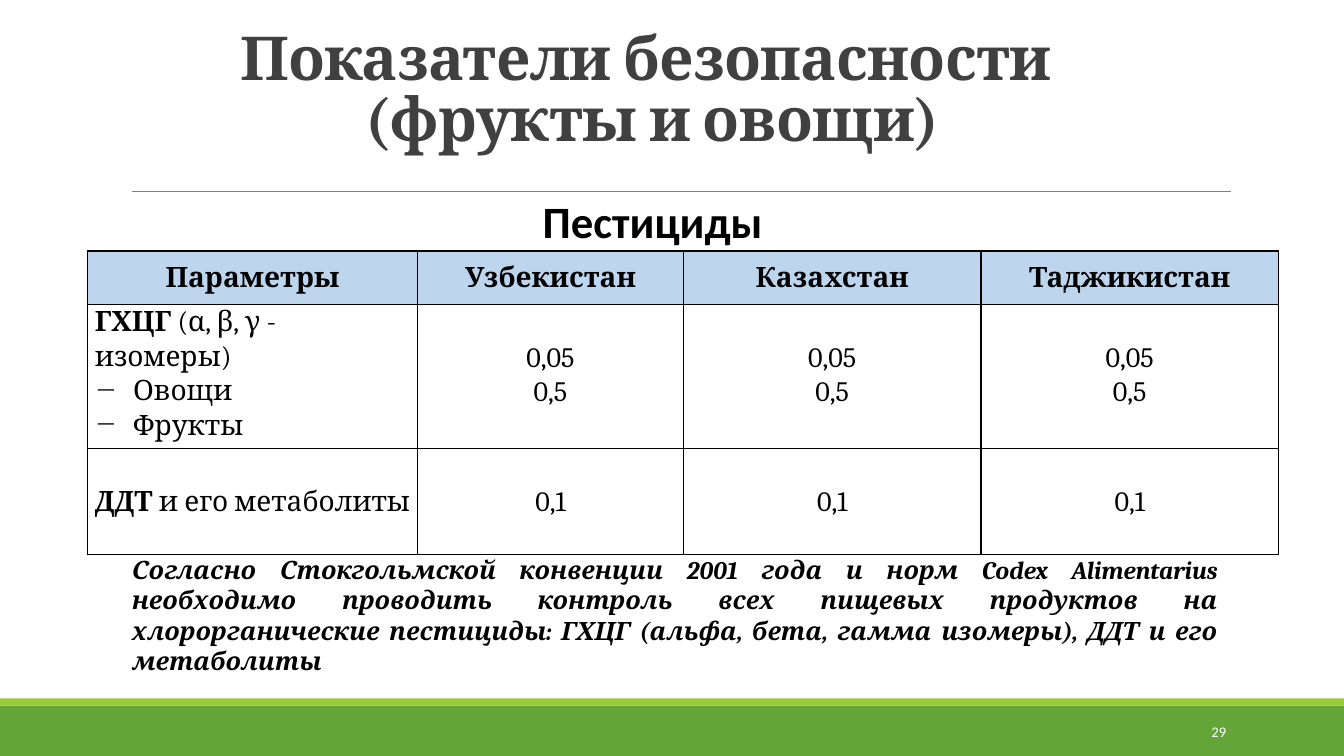
"""Build the slide on pesticide safety limits for fruit and vegetables."""
from dataclasses import dataclass
from typing import Optional

import lxml.etree
import pptx
import pptx.dml.color
import pptx.enum.shapes
import pptx.enum.text
import pptx.oxml
import pptx.oxml.ns
import pptx.util

Inches = pptx.util.Inches
Pt = pptx.util.Pt
RGBColor = pptx.dml.color.RGBColor
ALIGN = pptx.enum.text.PP_ALIGN
ANCHOR = pptx.enum.text.MSO_ANCHOR
qn = pptx.oxml.ns.qn

BLACK = RGBColor(0x00, 0x00, 0x00)
WHITE = RGBColor(0xFF, 0xFF, 0xFF)
DARK_GREY = RGBColor(0x40, 0x40, 0x40)
GREY = RGBColor(0x80, 0x80, 0x80)
GREEN = RGBColor(0x63, 0xA5, 0x37)
LIGHT_GREEN = RGBColor(0x99, 0xCB, 0x38)
HEADER_BLUE = RGBColor(0xBD, 0xD6, 0xEE)


@dataclass(frozen=True)
class Style:
    size: float
    font: str = "Cambria"
    color: RGBColor = BLACK
    bold: bool = False
    italic: bool = False
    align: ALIGN = ALIGN.CENTER
    line_spacing: float = 1.0
    tracking: int = 0


@dataclass(frozen=True)
class Label:
    text: str
    left: float
    top: float
    width: float
    height: float
    style: Style
    anchor: ANCHOR = ANCHOR.TOP
    wrap: bool = True


@dataclass(frozen=True)
class Band:
    top: float
    height: float
    color: RGBColor


@dataclass(frozen=True)
class Line:
    text: str
    bold_start: str = ""
    bullet: Optional[str] = None


@dataclass(frozen=True)
class Cell:
    lines: tuple[Line, ...]
    style: Style
    top_margin: float = 0
    header: bool = False


HEADER = Style(20, bold=True, line_spacing=1.07)
VALUE = Style(20, line_spacing=1.07)
PARAMETER = Style(20, align=ALIGN.LEFT, line_spacing=1.07)
LINE_HEIGHT = 0.35
COLUMN_WIDTHS = (3.27, 2.64, 2.95, 2.95)
ROW_HEIGHTS = (0.53, 1.43, 1.05)
COUNTRIES = ("Узбекистан", "Казахстан", "Таджикистан")

BANDS = (Band(7, 0.5, GREEN), Band(6.93, 0.07, LIGHT_GREEN))
LABELS = (
    Label("Показатели безопасности \v(фрукты и овощи)", 0.97, 0.76, 11, 0.82,
          Style(43.2, color=DARK_GREY, bold=True, line_spacing=0.85, tracking=-50),
          ANCHOR.BOTTOM),
    Label("Пестициды", 5.27, 1.84, 2.41, 0.65,
          Style(32, "Calibri", bold=True, line_spacing=1.07), wrap=False),
    Label("Согласно Стокгольмской конвенции 2001 года и норм Codex Alimentarius "
          "необходимо проводить контроль всех пищевых продуктов на "
          "хлорорганические пестициды: ГХЦГ (альфа, бета, гамма изомеры), "
          "ДДТ и его метаболиты", 1.21, 5.45, 10.97, 1.01,
          Style(18, bold=True, italic=True, align=ALIGN.JUSTIFY)),
    Label("29", 10.83, 7.06, 1.43, 0.4,
          Style(10.5, "Calibri", WHITE, align=ALIGN.RIGHT), ANCHOR.MIDDLE),
)
ROWS = (
    tuple(Cell((Line(name),), HEADER, header=True) for name in ("Параметры", *COUNTRIES)),
    (Cell((Line(" (α, β, γ - изомеры)", "ГХЦГ"),
           Line("Овощи", bullet="−"), Line("Фрукты", bullet="−")), PARAMETER),
     *(Cell((Line("0,05"), Line("0,5")), VALUE, LINE_HEIGHT) for _ in COUNTRIES)),
    (Cell((Line("и его метаболиты", "ДДТ "),), PARAMETER, LINE_HEIGHT),
     *(Cell((Line("0,1"),), VALUE, LINE_HEIGHT) for _ in COUNTRIES)),
)


def style_paragraph(paragraph, style: Style) -> None:
    paragraph.alignment = style.align
    paragraph.line_spacing = style.line_spacing
    font = paragraph.font
    font.name = style.font
    font.size = Pt(style.size)
    font.bold = style.bold
    font.italic = style.italic
    font.color.rgb = style.color
    if style.tracking:
        paragraph._p.pPr.find(qn("a:defRPr")).set("spc", str(style.tracking))


def add_band(slide, band: Band) -> None:
    shape = slide.shapes.add_shape(pptx.enum.shapes.MSO_SHAPE.RECTANGLE, 0,
                                   Inches(band.top), Inches(13.33), Inches(band.height))
    shape.shadow.inherit = False
    shape.fill.solid()
    shape.fill.fore_color.rgb = band.color
    shape.line.fill.background()


def add_rule(slide) -> None:
    connector = slide.shapes.add_connector(pptx.enum.shapes.MSO_CONNECTOR.STRAIGHT,
                                           Inches(1.31), Inches(1.9),
                                           Inches(12.21), Inches(1.9))
    connector.line.color.rgb = GREY
    connector.line.width = Pt(0.5)
    lxml.etree.SubElement(connector._element.spPr, qn("a:effectLst"))


def add_label(slide, label: Label) -> None:
    shape = slide.shapes.add_textbox(Inches(label.left), Inches(label.top),
                                     Inches(label.width), Inches(label.height))
    frame = shape.text_frame
    frame.word_wrap = label.wrap
    frame.vertical_anchor = label.anchor
    frame.text = label.text
    style_paragraph(frame.paragraphs[0], label.style)


def add_borders(table_cell) -> None:
    properties = table_cell._tc.get_or_add_tcPr()
    for index, side in enumerate(("lnL", "lnR", "lnT", "lnB")):
        border = pptx.oxml.parse_xml(
            f'<a:{side} xmlns:a="http://schemas.openxmlformats.org/drawingml/2006/main" '
            f'w="12700"><a:solidFill><a:srgbClr val="{BLACK}"/></a:solidFill></a:{side}>')
        properties.insert(index, border)


def write_line(paragraph, line: Line, style: Style) -> None:
    if line.bullet:
        properties = paragraph._p.get_or_add_pPr()
        properties.set("marL", str(Inches(0.38)))
        properties.set("indent", str(-Inches(0.38)))
        lxml.etree.SubElement(properties, qn("a:buChar")).set("char", line.bullet)
    if line.bold_start:
        run = paragraph.add_run()
        run.text = line.bold_start
        run.font.bold = True
    paragraph.add_run().text = line.text
    style_paragraph(paragraph, style)


def fill_cell(table_cell, cell: Cell) -> None:
    table_cell.margin_left = table_cell.margin_right = Inches(0.07)
    table_cell.margin_top = Inches(cell.top_margin)
    table_cell.margin_bottom = 0
    table_cell.vertical_anchor = ANCHOR.MIDDLE if cell.header else ANCHOR.TOP
    if cell.header:
        table_cell.fill.solid()
        table_cell.fill.fore_color.rgb = HEADER_BLUE
    else:
        table_cell.fill.background()
    add_borders(table_cell)
    frame = table_cell.text_frame
    for index, line in enumerate(cell.lines):
        paragraph = frame.add_paragraph() if index else frame.paragraphs[0]
        write_line(paragraph, line, cell.style)


def add_limits_table(slide) -> None:
    table = slide.shapes.add_table(len(ROW_HEIGHTS), len(COLUMN_WIDTHS), Inches(0.87),
                                   Inches(2.49), Inches(sum(COLUMN_WIDTHS)),
                                   Inches(sum(ROW_HEIGHTS))).table
    for column, width in zip(table.columns, COLUMN_WIDTHS):
        column.width = Inches(width)
    for row, height, cells in zip(table.rows, ROW_HEIGHTS, ROWS):
        row.height = Inches(height)
        for table_cell, cell in zip(row.cells, cells):
            fill_cell(table_cell, cell)


def main() -> None:
    presentation = pptx.Presentation()
    presentation.slide_width = Inches(13.33)
    presentation.slide_height = Inches(7.5)
    slide = presentation.slides.add_slide(presentation.slide_layouts[6])
    for band in BANDS:
        add_band(slide, band)
    add_rule(slide)
    add_limits_table(slide)
    for label in LABELS:
        add_label(slide, label)
    presentation.save("out.pptx")


if __name__ == "__main__":
    main()
